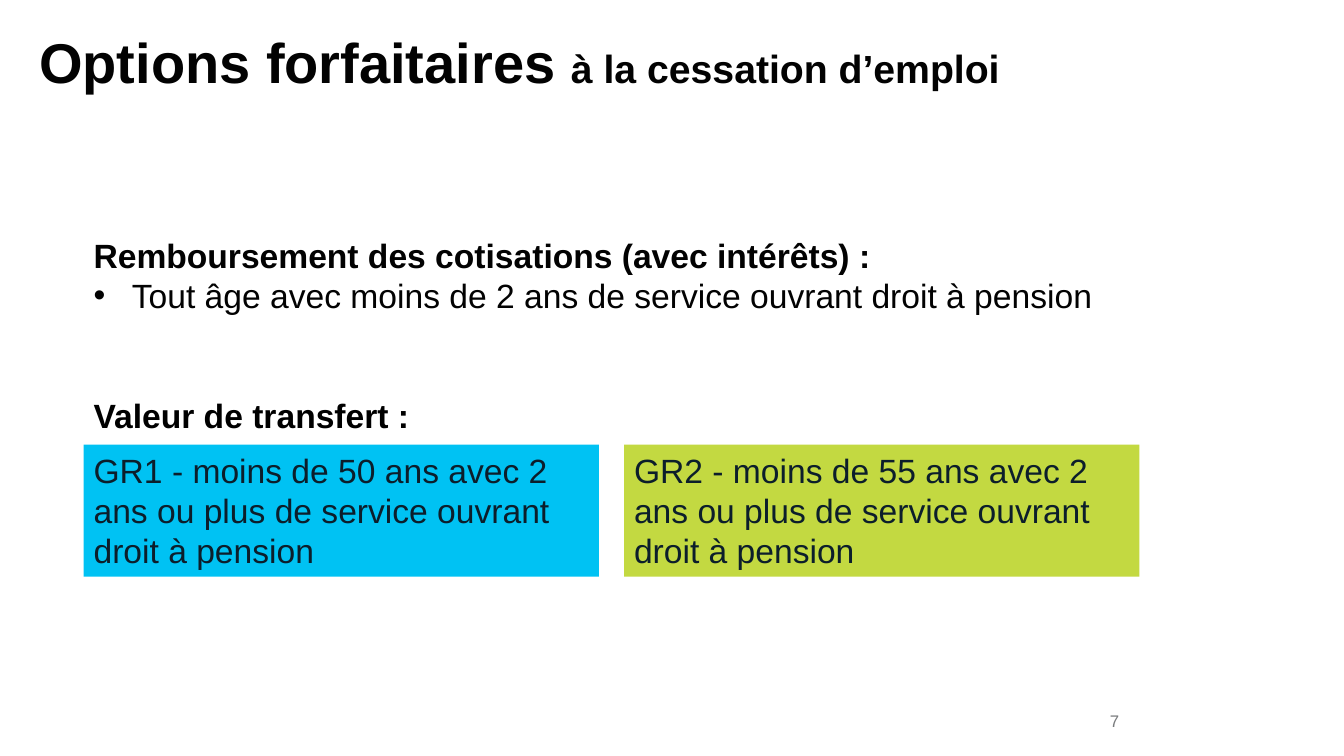
import pptx
import pptx.util
import pptx.dml.color
import pptx.enum.shapes
import pptx.enum.text
from lxml import etree

Inches = pptx.util.Inches
Pt = pptx.util.Pt
RGBColor = pptx.dml.color.RGBColor
ALIGN = pptx.enum.text.PP_ALIGN
ANCHOR = pptx.enum.text.MSO_ANCHOR

INK = RGBColor(0x02, 0x02, 0x02)
BLACK = RGBColor(0x00, 0x00, 0x00)
NAVY = RGBColor(0x0C, 0x1E, 0x2B)
GREY = RGBColor(0x79, 0x7B, 0x7D)
BLUE = RGBColor(0x00, 0xC2, 0xF3)
LIME = RGBColor(0xC3, 0xD9, 0x41)

LEFT = 0.83
WIDE = 10.5
CARD_W = 5.11
CARD_GAP = 0.25
DRAWING = "{http://schemas.openxmlformats.org/drawingml/2006/main}"


def set_all(item, values):
    for name, value in values.items():
        setattr(item, name, value)


def add_run(para, text, size, color, bold=False):
    run = para.add_run()
    run.text = text
    set_all(run.font, {"name": "Arial", "size": Pt(size), "bold": bold})
    run.font.color.rgb = color


def add_bullet(para, indent):
    props = para._p.get_or_add_pPr()
    props.set("marL", str(Inches(indent)))
    props.set("indent", str(Inches(-indent)))
    etree.SubElement(props, DRAWING + "buFont").set("typeface", "Arial")
    etree.SubElement(props, DRAWING + "buChar").set("char", "•")


def add_text(slide, left, top, width, height, **frame_format):
    box = slide.shapes.add_textbox(
        Inches(left), Inches(top), Inches(width), Inches(height))
    set_all(box.text_frame, {"word_wrap": True, **frame_format})
    return box.text_frame


def add_card(slide, left, fill, text):
    card = slide.shapes.add_shape(
        pptx.enum.shapes.MSO_SHAPE.RECTANGLE,
        Inches(left), Inches(4.41), Inches(CARD_W), Inches(1.31))
    card.shadow.inherit = False
    card.fill.solid()
    card.fill.fore_color.rgb = fill
    card.line.fill.background()
    set_all(card.text_frame, {"word_wrap": True, "vertical_anchor": ANCHOR.TOP})
    para = card.text_frame.paragraphs[0]
    para.alignment = ALIGN.LEFT
    add_run(para, text, 24, NAVY)


def main():
    deck = pptx.Presentation()
    set_all(deck, {"slide_width": Inches(13.33), "slide_height": Inches(7.5)})
    slide = deck.slides.add_slide(deck.slide_layouts[6])

    # Title
    sides = ("left", "top", "right", "bottom")
    flush = {f"margin_{side}": 0 for side in sides}
    title = add_text(slide, 0.39, 0.35, WIDE, 1.24, **flush).paragraphs[0]
    title.line_spacing = 0.9
    add_run(title, "Options forfaitaires ", 40, INK, True)
    add_run(title, "à la cessation d’emploi", 28, INK, True)

    # Refund of contributions
    refund = add_text(slide, LEFT, 2.28, WIDE, 0.91)
    add_run(refund.paragraphs[0],
            "Remboursement des cotisations (avec intérêts) :", 24, INK, True)
    point = refund.add_paragraph()
    add_bullet(point, 0.38)
    add_run(point,
            "Tout âge avec moins de 2 ans de service ouvrant droit à pension",
            24, INK)

    # Transfer value, one card per group
    value = add_text(slide, LEFT, 3.87, 6.57, 0.5)
    add_run(value.paragraphs[0], "Valeur de transfert :", 24, BLACK, True)
    groups = (("GR1", 50, BLUE), ("GR2", 55, LIME))
    for index, (group, age, fill) in enumerate(groups):
        add_card(slide, LEFT + index * (CARD_W + CARD_GAP), fill,
                 f"{group} - moins de {age} ans avec 2 ans ou plus "
                 "de service ouvrant droit à pension")

    # Page number
    page = add_text(slide, 9.63, 6.95, 1.57, 0.4,
                    vertical_anchor=ANCHOR.MIDDLE).paragraphs[0]
    page.alignment = ALIGN.RIGHT
    add_run(page, "7", 12, GREY)

    deck.save("out.pptx")


if __name__ == "__main__":
    main()
